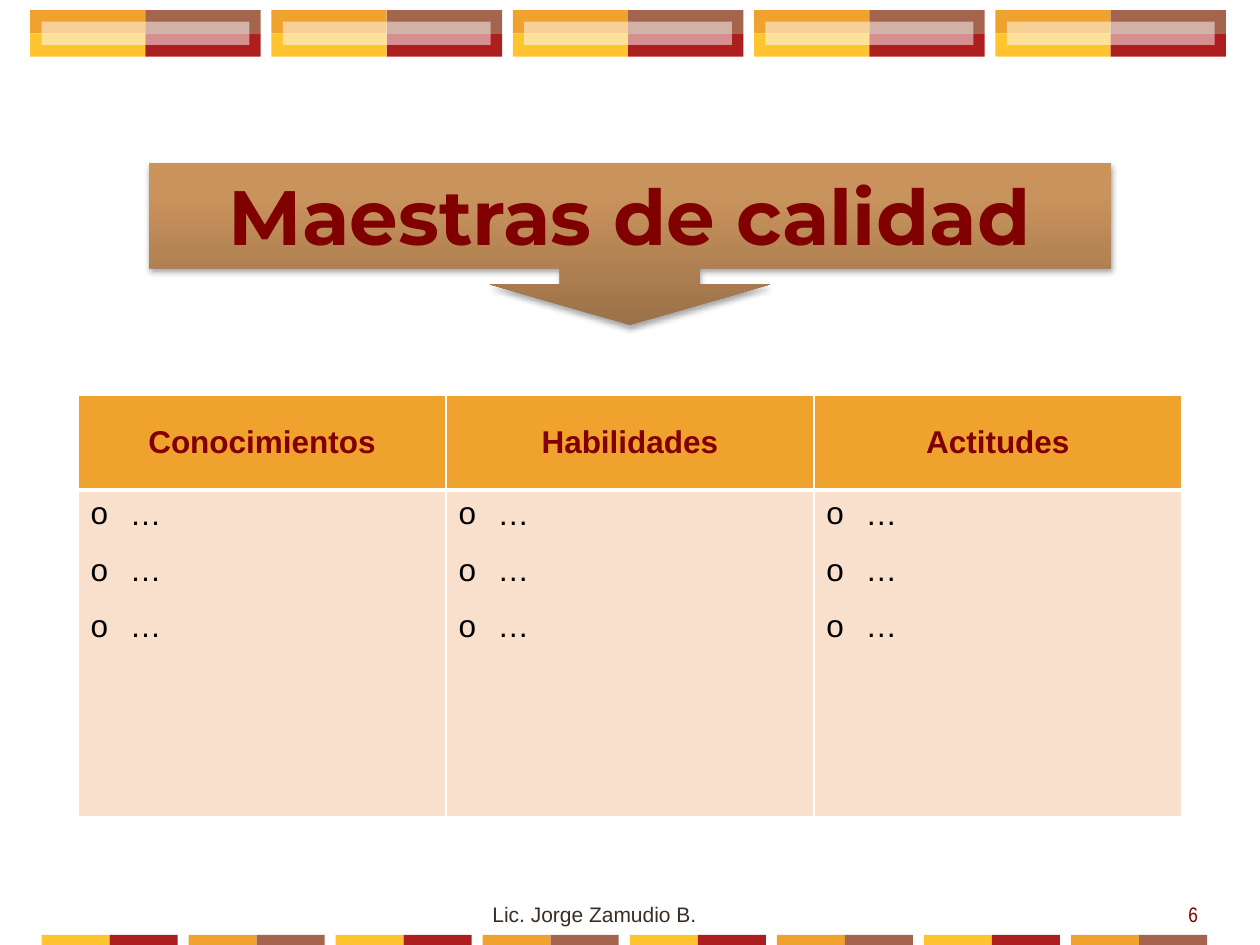
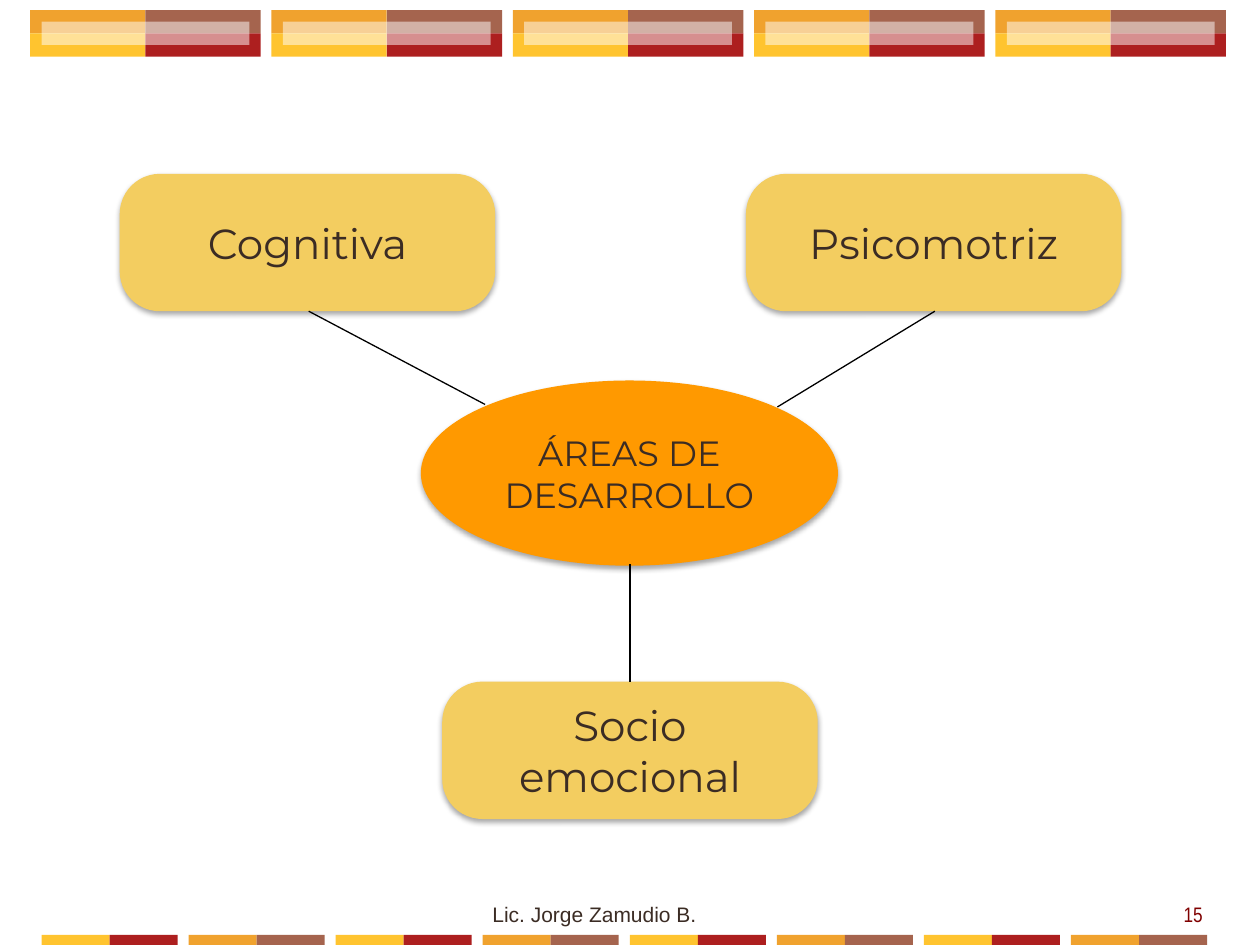
from typing import NamedTuple

from lxml.etree import SubElement
from pptx import Presentation
from pptx.dml.color import RGBColor
from pptx.enum.shapes import MSO_CONNECTOR, MSO_SHAPE as SHAPE
from pptx.enum.text import MSO_ANCHOR as ANCHOR, PP_ALIGN as ALIGN
from pptx.oxml import parse_xml
from pptx.oxml.ns import nsdecls, qn
from pptx.util import Inches, Pt

AMBER = RGBColor(0xF0, 0xA2, 0x2E)
BROWN = RGBColor(0xA5, 0x64, 0x4E)
YELLOW = RGBColor(0xFF, 0xC4, 0x2F)
RED = RGBColor(0xAD, 0x1F, 0x1F)
WHITE = RGBColor(0xFF, 0xFF, 0xFF)
BLACK = RGBColor(0x00, 0x00, 0x00)
MAROON = RGBColor(0x80, 0x00, 0x00)
DARK = RGBColor(0x3B, 0x2C, 0x24)
PEACH = RGBColor(0xF9, 0xE0, 0xCD)
SAND = RGBColor(0xF3, 0xCD, 0x60)
ORANGE = RGBColor(0xFF, 0x99, 0x00)
CALLOUT_STOPS = [
    (0, RGBColor(0x9B, 0x71, 0x48)),
    (80, RGBColor(0xC9, 0x93, 0x5D)),
    (100, RGBColor(0xCC, 0x94, 0x5B)),
]

HEADLINE = {"name": "Montserrat", "size": Pt(44), "bold": True, "color": MAROON}
AREA = {"name": "Montserrat", "size": Pt(24), "color": DARK}
CENTRE = {"name": "Montserrat", "size": Pt(20), "color": DARK}
HEADER = {"name": "Arial", "size": Pt(18), "bold": True, "color": MAROON}
ITEM = {"name": "Arial", "size": Pt(18), "bold": False, "color": BLACK}
AUTHOR = {"name": "Arial", "size": Pt(12), "color": DARK}
NUMBER = {"name": "Arial Narrow", "size": Pt(12), "color": MAROON}


class Box(NamedTuple):
    left: float
    top: float
    width: float
    height: float

    def inches(self):
        return [Inches(length) for length in self]


def write(paragraph, text, style, align=ALIGN.LEFT):
    paragraph.alignment = align
    run = paragraph.add_run()
    run.text = text
    for attribute, value in style.items():
        if attribute == "color":
            run.font.color.rgb = value
        else:
            setattr(run.font, attribute, value)


def add_plain(shapes, kind, box, color):
    shape = shapes.add_shape(kind, *box.inches())
    shape.shadow.inherit = False
    shape.fill.solid()
    shape.fill.fore_color.rgb = color
    shape.line.fill.background()
    return shape


def add_shadow(shape):
    effects = shape.element.spPr.find(qn("a:effectLst"))
    effects.append(parse_xml(
        f'<a:outerShdw {nsdecls("a")} blurRad="{Pt(3.1)}" dist="{Pt(1.8)}" '
        'dir="5400000" rotWithShape="0"><a:srgbClr val="000000">'
        '<a:alpha val="35000"/></a:srgbClr></a:outerShdw>'))


def add_label(slide, kind, box, color, text, style, anchor=ANCHOR.MIDDLE):
    shape = add_plain(slide.shapes, kind, box, color)
    add_shadow(shape)
    shape.text_frame.word_wrap = True
    shape.text_frame.vertical_anchor = anchor
    write(shape.text_frame.paragraphs[0], text, style, ALIGN.CENTER)
    return shape


def add_top_band(shapes, box, count=5):
    width, half = 1.83, box.height / 2
    pitch = (box.width - width) / (count - 1)
    for index in range(count):
        left = box.left + index * pitch
        for row, colors in enumerate([(AMBER, BROWN), (YELLOW, RED)]):
            for column, color in enumerate(colors):
                tile = Box(left + column * width / 2, box.top + row * half, width / 2, half)
                add_plain(shapes, SHAPE.RECTANGLE, tile, color)
        veil = Box(left + 0.09, box.top + half / 2, width - 0.18, half)
        shape = add_plain(shapes, SHAPE.RECTANGLE, veil, WHITE)
        tint = shape.element.spPr.find(".//" + qn("a:srgbClr"))
        SubElement(tint, qn("a:alpha"), val="50000")


def add_bottom_band(shapes, box, count=8):
    half = 0.54
    pitch = (box.width - 2 * half) / (count - 1)
    for index in range(count):
        for column, color in enumerate([(YELLOW, RED), (AMBER, BROWN)][index % 2]):
            tile = Box(box.left + index * pitch + column * half, box.top, half, box.height)
            add_plain(shapes, SHAPE.RECTANGLE, tile, color)


def add_bands_to_layout(layout, slide):
    bands = slide.shapes.add_group_shape()
    add_top_band(bands.shapes, Box(0.24, 0.08, 9.49, 0.37))
    add_bottom_band(bands.shapes, Box(0.33, 7.42, 9.25, 0.08))
    layout.shapes.element.append(bands.element)


def add_footer(slide, box, number):
    author = slide.shapes.add_textbox(*Box(box.left, box.top + 0.06, 1.84, 0.3).inches())
    author.text_frame.word_wrap = False
    write(author.text_frame.paragraphs[0], "Lic. Jorge Zamudio B.", AUTHOR)
    page_box = Box(box.left + box.width - 0.54, box.top, 0.54, box.height)
    page = slide.shapes.add_textbox(*page_box.inches())
    page.text_frame.word_wrap = True
    page.text_frame.vertical_anchor = ANCHOR.MIDDLE
    write(page.text_frame.paragraphs[0], number, NUMBER, ALIGN.CENTER)


def add_callout(slide, box, text):
    callout = add_label(slide, SHAPE.DOWN_ARROW_CALLOUT, box, AMBER, text, HEADLINE, ANCHOR.TOP)
    for index, value in enumerate([0.861, 0.861, 0.25, 0.65]):
        callout.adjustments[index] = value
    stops = "".join(f'<a:gs pos="{position * 1000}"><a:srgbClr val="{color}"/></a:gs>'
                    for position, color in CALLOUT_STOPS)
    gradient = parse_xml(f'<a:gradFill {nsdecls("a")} rotWithShape="1"><a:gsLst>{stops}</a:gsLst>'
                         '<a:lin ang="16200000" scaled="0"/></a:gradFill>')
    properties = callout.element.spPr
    properties.replace(properties.find(qn("a:solidFill")), gradient)


def format_cell(cell, color, bottom):
    properties = cell._tc.get_or_add_tcPr()
    for side, points in {"L": 1, "R": 1, "T": 1, "B": bottom}.items():
        properties.append(parse_xml(
            f'<a:ln{side} {nsdecls("a")} w="{Pt(points)}"><a:solidFill>'
            f'<a:srgbClr val="{WHITE}"/></a:solidFill></a:ln{side}>'))
    cell.fill.solid()
    cell.fill.fore_color.rgb = color


def add_bullet(paragraph):
    properties = paragraph._p.get_or_add_pPr()
    properties.set("marL", str(Inches(0.31)))
    properties.set("indent", str(Inches(-0.31)))
    SubElement(properties, qn("a:buFont"), typeface="Arial")
    SubElement(properties, qn("a:buChar"), char="o")


def add_competences(slide, box, competences):
    header_height = 0.75
    table = slide.shapes.add_table(2, len(competences), *box.inches()).table
    table.rows[0].height = Inches(header_height)
    table.rows[1].height = Inches(box.height - header_height)
    for column, (heading, items) in enumerate(competences.items()):
        table.columns[column].width = Inches(box.width / len(competences))
        header, body = table.cell(0, column), table.cell(1, column)
        format_cell(header, AMBER, 3)
        format_cell(body, PEACH, 1)
        header.vertical_anchor = ANCHOR.MIDDLE
        write(header.text_frame.paragraphs[0], heading, HEADER, ALIGN.CENTER)
        for index, item in enumerate(items):
            frame = body.text_frame
            paragraph = frame.add_paragraph() if index else frame.paragraphs[0]
            add_bullet(paragraph)
            if index < len(items) - 1:
                paragraph.space_after = Pt(12)
            write(paragraph, item, ITEM)


def add_link(slide, box, start, end):
    x1, y1, x2, y2 = (Inches(origin + offset) for origin, offset in
                      zip((box.left, box.top) * 2, start + end))
    link = slide.shapes.add_connector(MSO_CONNECTOR.STRAIGHT, x1, y1, x2, y2)
    link.line.color.rgb = BLACK
    link.line.width = Pt(0.75)
    SubElement(link.element.spPr, qn("a:effectLst"))


def add_areas(slide, box):
    width, height = 2.98, 1.09
    lower = box.height - height
    areas = {"Cognitiva": (0, 0), "Psicomotriz": (box.width - width, 0),
             "Socio emocional": (2.56, lower)}
    for area, (x, y) in areas.items():
        place = Box(box.left + x, box.top + y, width, height)
        shape = add_label(slide, SHAPE.ROUNDED_RECTANGLE, place, SAND, area, AREA)
        shape.adjustments[0] = 0.292
    centre = Box(box.left + 2.39, box.top + 1.64, 3.31, 1.47)
    add_label(slide, SHAPE.OVAL, centre, ORANGE, "ÁREAS DE DESARROLLO", CENTRE)
    for start, end in [((2.9, 1.83), (1.5, height)),
                       ((4.05, 3.1), (4.05, lower)),
                       ((5.22, 1.85), (6.47, height))]:
        add_link(slide, box, start, end)


def main():
    deck = Presentation()
    deck.slide_width, deck.slide_height = Inches(10), Inches(7.5)
    layout = deck.slide_layouts[6]
    quality, development = (deck.slides.add_slide(layout) for _ in range(2))
    add_bands_to_layout(layout, quality)

    headings = ["Conocimientos", "Habilidades", "Actitudes"]
    add_competences(quality, Box(0.62, 3.14, 8.76, 3.34),
                    {heading: ["…"] * 3 for heading in headings})
    add_callout(quality, Box(1.18, 1.29, 7.64, 1.29), "Maestras de calidad")
    add_areas(development, Box(0.95, 1.38, 7.95, 5.12))
    for slide, number in [(quality, "6"), (development, "15")]:
        add_footer(slide, Box(3.81, 7.05, 5.93, 0.41), number)
    deck.save("out.pptx")


if __name__ == "__main__":
    main()
